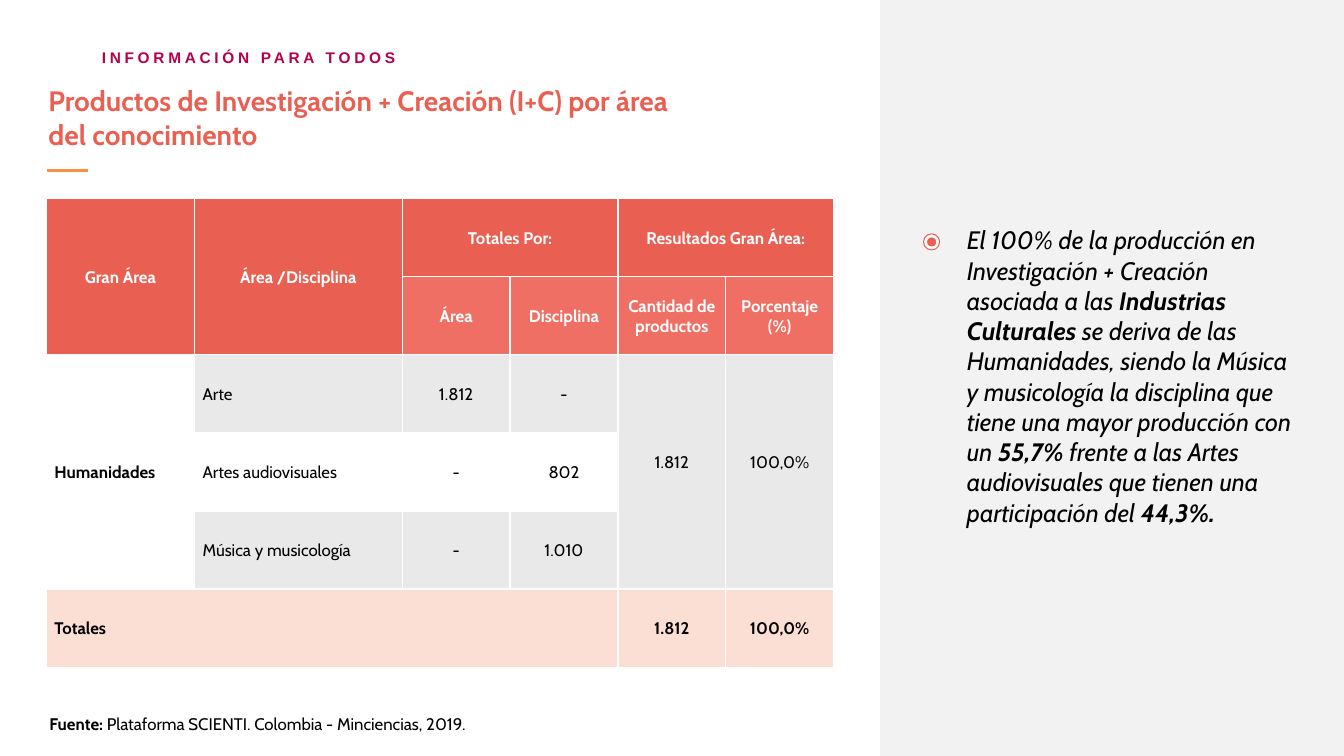
from dataclasses import dataclass

from lxml import etree
from pptx import Presentation
from pptx import util as u
from pptx.dml.color import RGBColor
from pptx.enum import shapes, text
from pptx.oxml.ns import qn

SCALE = 4572  # EMU in one px, 200 px to the inch
HUES = {
    "white": "FFFFFF", "black": "000000", "panel": "F2F2F2",
    "coral": "E96052", "rose": "EF6F64", "gray": "E9E9E9",
    "peach": "FBDED4", "wine": "B6004C", "orange": "F69240",
}
COLS = [294, 412] + [214] * 4
ROWS = [155] * 6


@dataclass
class Label:
    """A text box; words between asterisks are bold."""
    words: str
    box: tuple[int, int, int, int]
    pads: tuple[int, int, int, int]
    size: int
    hue: str = "black"
    face: str = "Cabin"
    slant: bool = False
    track: int = 0
    lead: float = 1.0


@dataclass
class Entry:
    """A table cell with its place, look and span."""
    row: int
    col: int
    words: str
    fill: str
    hue: str = "black"
    bold: bool = False
    mid: bool = True
    down: int = 1
    wide: int = 1
    foot: int = 0


LABELS = [
    Label("*INFORMACIÓN PARA TODOS*", (198, 80, 820, 50), (4, 4, 0, 0), 11,
          "wine", "Arial", track=265, lead=1.3),
    Label("*Productos de Investigación + Creación (I+C) por área del conocimiento*",
          (92, 166, 1240, 134), (4, 0, 0, 0), 20, "coral"),
    Label("El 100% de la producción en Investigación + Creación asociada a las "
          "*Industrias Culturales *se deriva de las Humanidades, siendo la Música "
          "y musicología la disciplina que tiene una mayor producción con un "
          "*55,7% *frente a las Artes audiovisuales que tienen una participación "
          "del *44,3%.*", (1892, 432, 704, 694), (26, 14, 26, 14), 18, slant=True),
    Label("*Fuente: *Plataforma SCIENTI. Colombia - Minciencias, 2019.",
          (72, 1402, 1316, 68), (26, 14, 26, 14), 12),
]

HEADS = [
    Entry(0, 0, "Gran Área", "coral", "white", True, down=2),
    Entry(0, 1, "Área /Disciplina", "coral", "white", True, down=2),
    Entry(0, 2, "Totales Por:", "coral", "white", True, wide=2),
    Entry(0, 4, "Resultados Gran Área:", "coral", "white", True, wide=2),
] + [
    Entry(1, col, words, "rose", "white", True)
    for col, words in enumerate(
        ["Área", "Disciplina", "Cantidad de productos", "Porcentaje (%)"], 2)
]
FIELDS = [
    ("Arte", "1.812", "-"),
    ("Artes audiovisuales", "-", "802"),
    ("Música y musicología", "-", "1.010"),
]
BODY = [
    Entry(row, col, words, "white" if row == 3 else "gray", mid=col > 1)
    for row, field in enumerate(FIELDS, 2)
    for col, words in enumerate(field, 1)
]
SPANS = [
    Entry(2, 0, "Humanidades", "white", bold=True, mid=False, down=3),
    Entry(2, 4, "1.812", "gray", down=3, foot=40),
    Entry(2, 5, "100,0%", "gray", down=3, foot=40),
]
TOTALS = [
    Entry(5, 0, "Totales", "peach", bold=True, mid=False, wide=4),
    Entry(5, 4, "1.812", "peach", bold=True),
    Entry(5, 5, "100,0%", "peach", bold=True),
]


def px(count: int) -> u.Emu:
    return u.Emu(count * SCALE)


def rgb(hue: str) -> RGBColor:
    return RGBColor.from_string(HUES[hue])


def style(font, size: int, hue: str, face: str = "Cabin") -> None:
    font.size, font.name = u.Pt(size), face
    font.color.rgb = rgb(hue)


def add_label(slide, label: Label) -> None:
    frame = slide.shapes.add_textbox(*map(px, label.box)).text_frame
    frame.word_wrap = True
    (frame.margin_left, frame.margin_top,
     frame.margin_right, frame.margin_bottom) = map(px, label.pads)
    para = frame.paragraphs[0]
    para.line_spacing = label.lead
    style(para.font, label.size, label.hue, label.face)
    para.font.italic = label.slant
    for turn, words in enumerate(label.words.split("*")):
        if words:
            run = para.add_run()
            run.text = words
            run.font.bold = turn % 2 == 1
            if label.track:
                run.font._element.set("spc", str(label.track))


def add_form(group, kind, box: tuple[int, int, int, int], fill: str,
             edge: str = "") -> None:
    """Add a filled shape, with a thin outline if an edge colour is given."""
    form = group.shapes.add_shape(kind, *map(px, box))
    form.shadow.inherit = False
    form.fill.solid()
    form.fill.fore_color.rgb = rgb(fill)
    if edge:
        form.line.color.rgb = rgb(edge)
        form.line.width = u.Pt(0.75)
    else:
        form.line.fill.background()


def add_rule(slide) -> None:
    rule = slide.shapes.add_connector(
        shapes.MSO_CONNECTOR.STRAIGHT, px(94), px(338), px(174), px(338))
    rule.line.color.rgb = rgb("orange")
    rule.line.width = u.Pt(2.25)
    etree.SubElement(rule._element.spPr, qn("a:effectLst"))


def add_edges(cell) -> None:
    """Give a cell thin white borders."""
    props = cell._tc.get_or_add_tcPr()
    for place, side in enumerate(["lnL", "lnR", "lnT", "lnB"]):
        line = etree.Element(qn(f"a:{side}"), w=str(u.Pt(1)))
        fill = etree.SubElement(line, qn("a:solidFill"))
        etree.SubElement(fill, qn("a:srgbClr"), val=HUES["white"])
        props.insert(place, line)


def add_grid(slide, entries: list[Entry]) -> None:
    """Add the table of products."""
    grid = slide.shapes.add_table(
        len(ROWS), len(COLS), px(92), px(394), px(sum(COLS)), px(sum(ROWS))).table
    grid.first_row = grid.horz_banding = False
    for col, width in zip(grid.columns, COLS):
        col.width = px(width)
    for row, height in zip(grid.rows, ROWS):
        row.height = px(height)
    for cell in grid.iter_cells():
        add_edges(cell)
    for entry in entries:
        cell = grid.cell(entry.row, entry.col)
        if entry.down * entry.wide > 1:
            cell.merge(grid.cell(entry.row + entry.down - 1,
                                 entry.col + entry.wide - 1))
        cell.fill.solid()
        cell.fill.fore_color.rgb = rgb(entry.fill)
        cell.vertical_anchor = text.MSO_ANCHOR.MIDDLE
        cell.margin_left = cell.margin_right = px(16)
        cell.margin_top, cell.margin_bottom = px(2), px(entry.foot)
        cell.text = entry.words
        para = cell.text_frame.paragraphs[0]
        para.alignment = text.PP_ALIGN.CENTER if entry.mid else text.PP_ALIGN.LEFT
        style(para.font, 12, entry.hue)
        para.font.bold = entry.bold


def main() -> None:
    deck = Presentation()
    deck.slide_width, deck.slide_height = px(2666), px(1500)
    slide = deck.slides.add_slide(deck.slide_layouts[6])
    add_form(slide, shapes.MSO_SHAPE.RECTANGLE, (1746, 0, 920, 1500), "panel")
    mark = slide.shapes.add_group_shape()
    add_form(mark, shapes.MSO_SHAPE.OVAL, (1832, 464, 32, 32), "white", "coral")
    add_form(mark, shapes.MSO_SHAPE.OVAL, (1839, 471, 18, 18), "coral")
    for label in LABELS:
        add_label(slide, label)
    add_rule(slide)
    add_grid(slide, HEADS + BODY + SPANS + TOTALS)
    deck.save("out.pptx")


if __name__ == "__main__":
    main()
